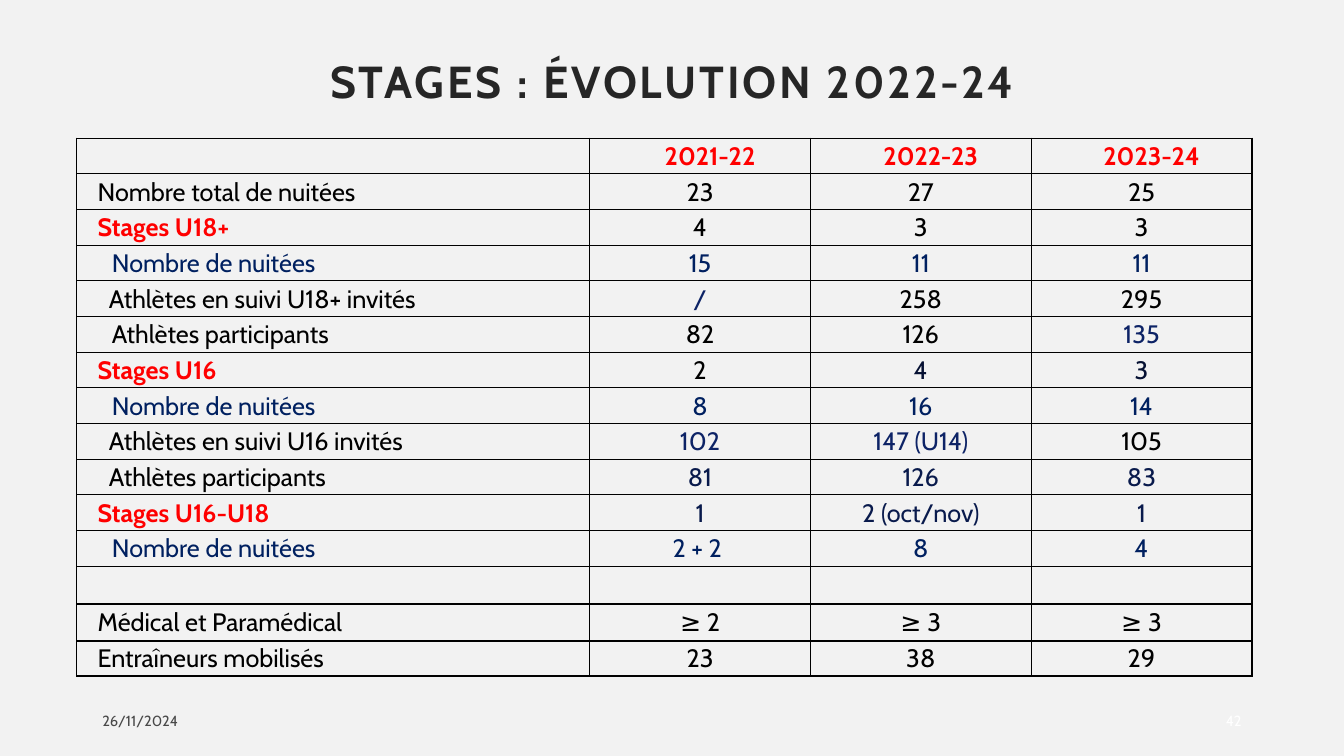
from dataclasses import dataclass
from typing import Any

import pptx
import pptx.dml.color
import pptx.enum.text
import pptx.oxml
import pptx.oxml.ns
import pptx.util

COLOURS: dict[str, str] = {
    "background": "F2F2F2",
    "title": "262626",
    "date": "494949",
    "white": "FFFFFF",
    "black": "000000",
    "red": "FF0000",
    "navy": "002060",
    "blue": "0D2366",
    "deep": "091A4C",
    "dark": "061133",
}
FONT = "Cabin"
SLIDE_WIDTH = pptx.util.Inches(13.33)
SLIDE_HEIGHT = pptx.util.Inches(7.5)
GRID_COLUMNS, GRID_ROWS = 160, 90
ALIGN = pptx.enum.text.PP_ALIGN
MIDDLE = pptx.enum.text.MSO_ANCHOR.MIDDLE

COLUMN_WIDTHS = [61.08] + [26.28] * 3
ROW_HEIGHTS = [4.25] * 12 + [4.5, 4.4, 4.17]
LABEL_INSET, SUBLABEL_INSET, NESTED_INSET, VALUE_INSET = 2.5, 3.85, 4.2, 0.12


@dataclass(frozen=True)
class Area:
    column: float
    row: float
    columns: float
    rows: float

    def box(self) -> tuple[int, int, int, int]:
        return across(self.column), down(self.row), across(self.columns), down(self.rows)


@dataclass(frozen=True)
class Line:
    label: str
    colour: str
    inset: float
    values: tuple[str, str, str]
    tones: tuple[str, str, str]
    bold: bool = False
    header: bool = False


@dataclass(frozen=True)
class Footer:
    text: str
    area: Area
    colour: str
    alignment: Any


def across(columns: float) -> int:
    return round(SLIDE_WIDTH * columns / GRID_COLUMNS)


def down(rows: float) -> int:
    return round(SLIDE_HEIGHT * rows / GRID_ROWS)


def same(colour: str) -> tuple[str, str, str]:
    return colour, colour, colour


def heading(text: str, values: tuple[str, str, str], tones: tuple[str, str, str]) -> Line:
    return Line(text, "red", LABEL_INSET, values, tones, bold=True)


def nights(*values: str) -> Line:
    return Line("Nombre de nuitées", "navy", NESTED_INSET, values, same("navy"))


def plain(text: str, *values: str) -> Line:
    return Line(text, "black", LABEL_INSET, values, same("black"))


LINES = [
    Line("", "black", LABEL_INSET, ("2021-22", "2022-23", "2023-24"), same("red"), header=True),
    plain("Nombre total de nuitées", "23", "27", "25"),
    heading("Stages U18+", ("4", "3", "3"), same("black")),
    nights("15", "11", "11"),
    Line("Athlètes en suivi U18+ invités", "black", SUBLABEL_INSET,
         ("/", "258", "295"), ("blue", "black", "black")),
    Line("Athlètes participants", "black", NESTED_INSET,
         ("82", "126", "135"), ("black", "black", "blue")),
    heading("Stages U16", ("2", "4", "3"), ("black", "dark", "dark")),
    nights("8", "16", "14"),
    Line("Athlètes en suivi U16 invités", "black", SUBLABEL_INSET,
         ("102", "147 (U14)", "105"), ("blue", "blue", "black")),
    Line("Athlètes participants", "black", SUBLABEL_INSET,
         ("81", "126", "83"), same("deep")),
    heading("Stages U16-U18", ("1", "2 (oct/nov)", "1"), same("deep")),
    nights("2 + 2 ", "8", "4"),
    plain("", "", "", ""),
    plain("Médical et Paramédical", "≥ 2", "≥ 3", "≥ 3"),
    plain("Entraîneurs mobilisés", "23", "38", "29"),
]
FOOTERS = [
    Footer("26/11/2024", Area(11, 83.4, 36, 4.8), "date", ALIGN.LEFT),
    Footer("42", Area(137, 83.4, 12, 4.8), "white", ALIGN.RIGHT),
]


def apply(target: Any, values: dict[str, Any]) -> None:
    for name, value in values.items():
        setattr(target, name, value)


def colour_of(name: str) -> pptx.dml.color.RGBColor:
    return pptx.dml.color.RGBColor.from_string(COLOURS[name])


def write(paragraph: Any, text: str, size: float, colour: str, alignment: Any,
          bold: bool = False) -> None:
    paragraph.alignment = alignment
    if text:
        paragraph.add_run().text = text
    for font in [paragraph.font] + [run.font for run in paragraph.runs]:
        apply(font, {"name": FONT, "size": pptx.util.Pt(size), "bold": bold})
        font.color.rgb = colour_of(colour)


def add_borders(cell: Any) -> None:
    properties = cell._tc.get_or_add_tcPr()
    for position, side in enumerate(("lnL", "lnR", "lnT", "lnB")):
        border = pptx.oxml.parse_xml(
            f'<a:{side} {pptx.oxml.ns.nsdecls("a")} w="12700"><a:solidFill>'
            f'<a:srgbClr val="{COLOURS["black"]}"/></a:solidFill></a:{side}>'
        )
        properties.insert(position, border)


def fill_cell(cell: Any, text: str, colour: str, inset: float, alignment: Any,
              bold: bool) -> None:
    apply(cell, {
        "margin_left": across(inset),
        "margin_right": across(0.12),
        "margin_top": down(0.12),
        "margin_bottom": 0,
        "vertical_anchor": MIDDLE,
    })
    cell.fill.background()
    add_borders(cell)
    write(cell.text_frame.paragraphs[0], text, 18, colour, alignment, bold)


def add_title(slide: Any) -> None:
    title = slide.shapes.title
    apply(title, dict(zip(("left", "top", "width", "height"), Area(11, 2, 129.6, 16).box())))
    apply(title.text_frame, {
        "vertical_anchor": MIDDLE,
        "word_wrap": True,
        "auto_size": pptx.enum.text.MSO_AUTO_SIZE.NONE,
    })
    paragraph = title.text_frame.paragraphs[0]
    write(paragraph, "STAGES : ÉVOLUTION 2022-24", 32, "title", ALIGN.LEFT, True)
    paragraph.line_spacing = 0.9
    paragraph._p.get_or_add_pPr().set("marL", str(across(27.1)))
    paragraph.runs[0].font._element.set("spc", "200")


def add_stage_table(slide: Any) -> None:
    area = Area(9.12, 16.44, sum(COLUMN_WIDTHS), sum(ROW_HEIGHTS))
    table = slide.shapes.add_table(len(LINES), len(COLUMN_WIDTHS), *area.box()).table
    apply(table, {"first_row": False, "horz_banding": False})
    for column, width in zip(table.columns, COLUMN_WIDTHS):
        column.width = across(width)
    for row, height, line in zip(table.rows, ROW_HEIGHTS, LINES):
        row.height = down(height)
        label, *figures = row.cells
        fill_cell(label, line.label, line.colour, line.inset, ALIGN.LEFT, line.bold)
        inset = LABEL_INSET if line.header else VALUE_INSET
        for cell, value, tone in zip(figures, line.values, line.tones):
            fill_cell(cell, value, tone, inset, ALIGN.CENTER, line.header)


def add_footer(slide: Any, footer: Footer) -> None:
    frame = slide.shapes.add_textbox(*footer.area.box()).text_frame
    apply(frame, {"word_wrap": True, "vertical_anchor": MIDDLE})
    write(frame.paragraphs[0], footer.text, 10.5, footer.colour, footer.alignment)


def main() -> None:
    presentation = pptx.Presentation()
    apply(presentation, {"slide_width": SLIDE_WIDTH, "slide_height": SLIDE_HEIGHT})
    slide = presentation.slides.add_slide(presentation.slide_layouts.get_by_name("Title Only"))
    slide.background.fill.solid()
    slide.background.fill.fore_color.rgb = colour_of("background")
    add_title(slide)
    add_stage_table(slide)
    for footer in FOOTERS:
        add_footer(slide, footer)
    presentation.save("out.pptx")


if __name__ == "__main__":
    main()
